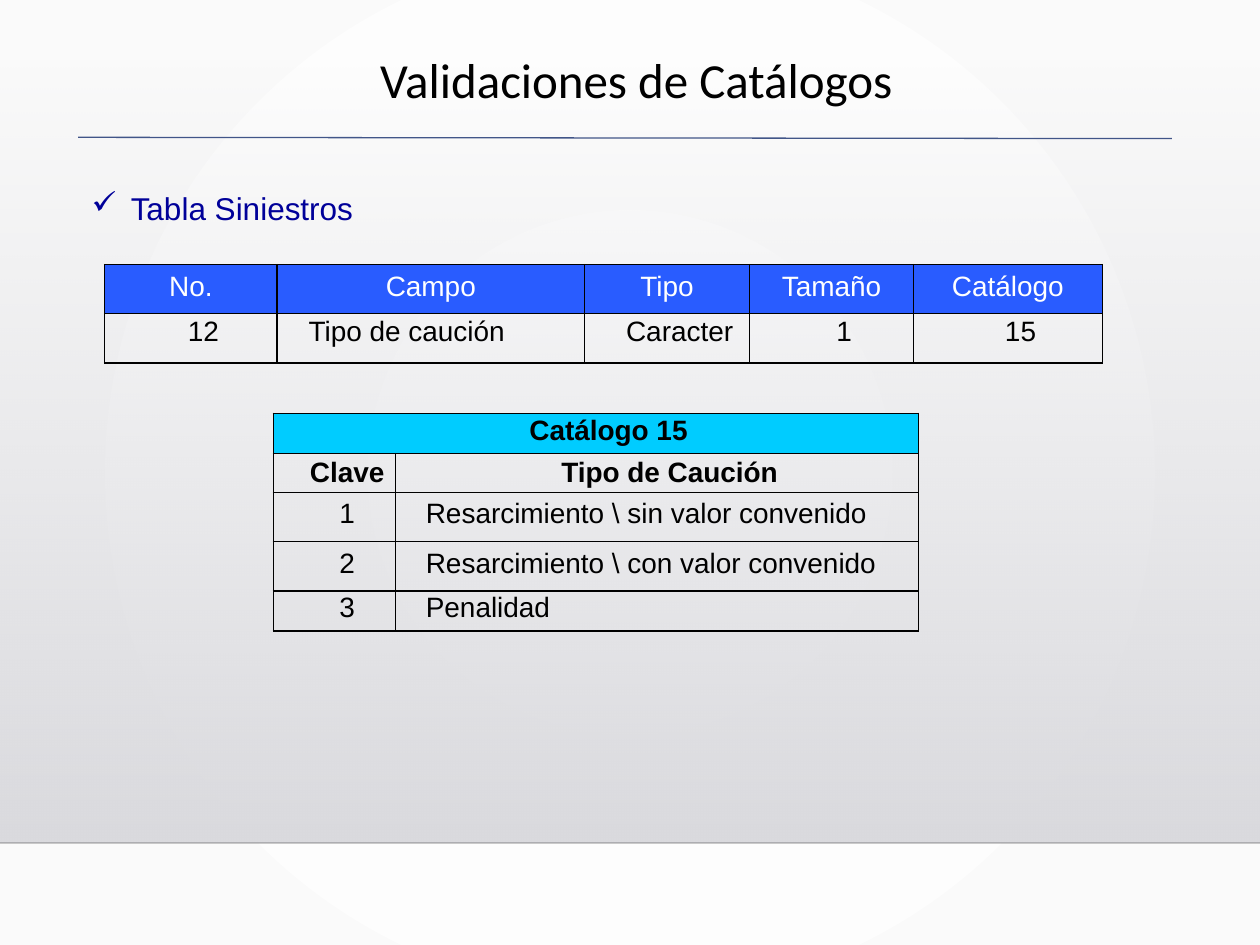
from dataclasses import dataclass

from lxml.etree import SubElement
from pptx import Presentation
from pptx.dml.color import RGBColor
from pptx.enum.shapes import MSO_CONNECTOR as Connector, MSO_SHAPE as Shape
from pptx.enum.text import MSO_ANCHOR as Anchor, PP_ALIGN as Align
from pptx.oxml.ns import qn
from pptx.util import Inches, Pt


@dataclass(frozen=True)
class Theme:
    """Colours, fonts and type sizes of the slide."""
    black: str = "000000"
    white: str = "FFFFFF"
    edge: str = "FAFAFA"
    shade: str = "DADADE"
    rule: str = "415588"
    floor: str = "000001"
    heading: str = "000099"
    header: str = "295CFF"
    catalog: str = "00CCFF"
    title_font: str = "Calibri"
    body_font: str = "Arial"
    title_size: int = 28
    heading_size: int = 18
    table_size: int = 16


THEME = Theme()


def add_node(parent, tag, **attributes):
    """Append a DrawingML element and return it."""
    return SubElement(parent, qn(f"a:{tag}"), {key: str(value) for key, value in attributes.items()})


def add_color(parent, color, alpha=100):
    """Append a colour with an opacity in percent."""
    node = add_node(parent, "srgbClr", val=color)
    if alpha < 100:
        add_node(node, "alpha", val=alpha * 1000)


def add_gradient(properties, stops):
    """Replace a solid fill with a gradient and return its element."""
    solid = properties.find(qn("a:solidFill"))
    gradient = add_node(properties, "gradFill", rotWithShape=1)
    properties.replace(solid, gradient)
    stop_list = add_node(gradient, "gsLst")
    for position, color, alpha in stops:
        add_color(add_node(stop_list, "gs", pos=position * 1000), color, alpha)
    return gradient


def paint_background(page):
    """Fill the page with a circular gradient."""
    page.background.fill.solid()
    properties = page.element.xpath("./p:cSld/p:bg/p:bgPr")[0]
    gradient = add_gradient(properties, [(0, THEME.white, 100), (100, THEME.edge, 100)])
    circle = add_node(gradient, "path", path="circle")
    add_node(circle, "fillToRect", l=50000, t=50000, r=50000, b=50000)


def add_shade(page, left, top, width, height):
    """Add a rectangle that fades in from top to bottom."""
    shade = page.shapes.add_shape(Shape.RECTANGLE, Inches(left), Inches(top), Inches(width), Inches(height))
    shade.shadow.inherit = False
    shade.line.fill.background()
    shade.fill.solid()
    gradient = add_gradient(shade.element.spPr, [(0, THEME.shade, 0), (100, THEME.shade, 100)])
    add_node(gradient, "lin", ang=90 * 60000, scaled=0)


def add_rule(page, start, end, color, width, alpha=100):
    """Add a straight line between two points."""
    rule = page.shapes.add_connector(Connector.STRAIGHT, *map(Inches, start + end))
    rule.line.color.rgb = RGBColor.from_string(color)
    rule.line.width = Pt(width)
    if alpha < 100:
        node = rule.element.spPr.find(".//" + qn("a:srgbClr"))
        add_node(node, "alpha", val=alpha * 1000)
    add_node(rule.element.spPr, "effectLst")


def write(frame, text, size=THEME.table_size, font=THEME.body_font, color=THEME.black, bold=False,
          align=Align.CENTER, margin=0, indent=0, bullet=None, leading=None, before=0, after=0):
    """Write one formatted paragraph into a text frame."""
    para = frame.paragraphs[0]
    para.alignment = align
    properties = para._p.get_or_add_pPr()
    properties.set("marL", str(Inches(margin)))
    properties.set("indent", str(Inches(indent)))
    if bullet:
        add_node(properties, "buChar", char=bullet)
    if leading:
        para.line_spacing = Pt(leading)
        para.space_before, para.space_after = Pt(before), Pt(after)
    span = para.add_run()
    span.text = text
    span.font.size = Pt(size)
    span.font.name = font
    span.font.bold = bold
    span.font.color.rgb = RGBColor.from_string(color)


def add_text(page, text, left, top, width, height, **style):
    """Add a wrapping text box."""
    box = page.shapes.add_textbox(Inches(left), Inches(top), Inches(width), Inches(height))
    box.text_frame.word_wrap = True
    write(box.text_frame, text, **style)


def add_grid(page, left, top, widths, heights):
    """Add an unbanded table with the given column and row sizes."""
    table = page.shapes.add_table(len(heights), len(widths), Inches(left), Inches(top),
                                  Inches(sum(widths)), Inches(sum(heights))).table
    table.first_row = table.horz_banding = False
    for column, width in zip(table.columns, widths):
        column.width = Inches(width)
    for row, height in zip(table.rows, heights):
        row.height = Inches(height)
    return table


def fill_row(table, index, texts, fill=None, inset=None, aligns=None, margins=None, **style):
    """Fill one table row with bordered cells."""
    count = len(table.columns)
    aligns = aligns or [Align.CENTER] * count
    margins = margins or [0] * count
    for column, (text, align, margin) in enumerate(zip(texts, aligns, margins)):
        cell = table.cell(index, column)
        if inset is not None:
            cell.vertical_anchor = Anchor.MIDDLE
            cell.margin_left = cell.margin_right = Inches(inset)
            cell.margin_top = cell.margin_bottom = 0
        properties = cell._tc.get_or_add_tcPr()
        for side in ("lnL", "lnR", "lnT", "lnB"):
            border = add_node(properties, side, w=Pt(1))
            add_color(add_node(border, "solidFill"), THEME.black)
        if fill:
            cell.fill.solid()
            cell.fill.fore_color.rgb = RGBColor.from_string(fill)
        else:
            cell.fill.background()
        if not cell.is_spanned:
            write(cell.text_frame, text, align=align, margin=margin, **style)


def add_field_table(page):
    """Add the table that describes the field."""
    table = add_grid(page, 0.83, 2.1, [1.37, 2.44, 1.31, 1.3, 1.5], [0.39, 0.39])
    fill_row(table, 0, ["No.", "Campo", "Tipo", "Tamaño", "Catálogo"],
             fill=THEME.header, color=THEME.white)
    center = Align.CENTER
    fill_row(table, 1, ["12", "Tipo de caución", "Caracter", "1", "15"], inset=0.05,
             aligns=[center, Align.JUSTIFY, center, center, center],
             indent=0.2, leading=10.8, before=1.5, after=2)


def add_catalog_table(page):
    """Add the table that lists the catalogue values."""
    table = add_grid(page, 2.17, 3.28, [0.97, 4.15], [0.32, 0.31, 0.39, 0.39, 0.32])
    table.cell(0, 0).merge(table.cell(0, 1))
    common = {"inset": 0, "indent": 0.2}
    spaced = common | {"leading": 14.5, "before": 1, "after": 1}
    fill_row(table, 0, ["Catálogo 15", ""], fill=THEME.catalog, bold=True, **spaced)
    fill_row(table, 1, ["Clave", "Tipo de Caución"], bold=True, **common)
    kinds = ["Resarcimiento \\ sin valor convenido", "Resarcimiento \\ con valor convenido", "Penalidad"]
    for key, kind in enumerate(kinds, start=1):
        fill_row(table, key + 1, [str(key), kind], aligns=[Align.CENTER, Align.JUSTIFY],
                 margins=[0, 0.04], **spaced)


def main():
    """Build the slide and save it."""
    deck = Presentation()
    deck.slide_width, deck.slide_height = Inches(10), Inches(7.5)
    page = deck.slides.add_slide(deck.slide_layouts[6])
    paint_background(page)
    add_shade(page, 0, 0.51, 10, 6.18)
    add_rule(page, (0, 6.69), (10, 6.69), THEME.floor, 1, alpha=20)
    add_text(page, "Validaciones de Catálogos", 1.38, 0.34, 7.34, 0.57,
             size=THEME.title_size, font=THEME.title_font)
    add_rule(page, (0.62, 1.09), (9.3, 1.1), THEME.rule, 0.75)
    add_text(page, "Tabla Siniestros", 0.63, 1.45, 8.67, 0.44, size=THEME.heading_size,
             color=THEME.heading, align=Align.JUSTIFY, margin=0.31, indent=-0.31, bullet="✓")
    add_field_table(page)
    add_catalog_table(page)
    deck.save("out.pptx")


if __name__ == "__main__":
    main()
